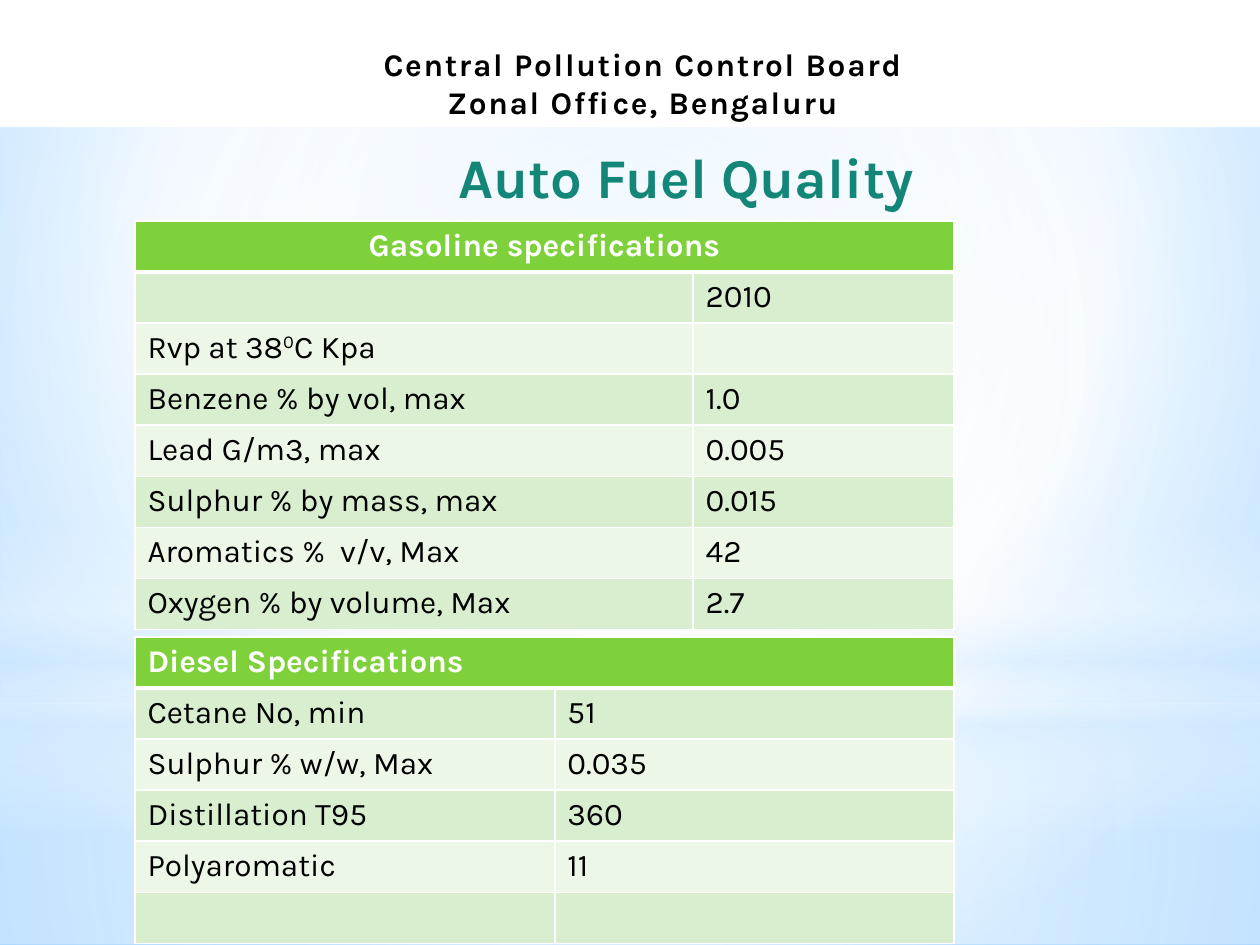
import pptx
import pptx.dml.color
import pptx.enum.shapes
import pptx.enum.text
import pptx.oxml.ns
import pptx.oxml.xmlchemy
import pptx.util
import lxml.etree

Pt = pptx.util.Pt
SHAPE = pptx.enum.shapes.MSO_SHAPE
ALIGN = pptx.enum.text.PP_ALIGN
ANCHOR = pptx.enum.text.MSO_ANCHOR
qn = pptx.oxml.ns.qn

COLORS = {
    "white": "FFFFFF", "black": "000000", "teal": "138677",
    "green": "7FD13B", "band_dark": "D8EECE", "band_light": "ECF7E8",
    "sky": "C2E3FF", "deep_sky": "79C1FF", "pale_sky": "D6ECFF",
}
WIDTH, HEIGHT = 720, 540
CENTER = (50, 50, 50, 50)


def rgb(name):
    return pptx.dml.color.RGBColor.from_string(COLORS[name])


def write_text(frame, lines, size=18, color="black", bold=False,
               align=ALIGN.LEFT, spacing=0):
    """Fill a text frame; parts between ^ marks are superscript."""
    for number, line in enumerate(lines):
        paragraph = frame.paragraphs[0] if number == 0 else frame.add_paragraph()
        paragraph.alignment = align
        for position, part in enumerate(line.split("^")):
            run = paragraph.add_run()
            run.text = part
            run.font.name = "Karla"
            run.font.size = Pt(size)
            run.font.bold = bold
            run.font.color.rgb = rgb(color)
            if spacing:
                run.font._element.set("spc", str(spacing * 100))
            if position % 2:
                run.font._element.set("baseline", "30000")


def set_gradient(fill, owner, stops, focus=None):
    """Stops are (position, colour, opacity); focus makes the gradient circular."""
    fill.gradient()
    gradient = owner.find(".//" + qn("a:gradFill"))
    for child in list(gradient):
        gradient.remove(child)
    stop_list = lxml.etree.SubElement(gradient, qn("a:gsLst"))
    for position, color, opacity in stops:
        stop = lxml.etree.SubElement(stop_list, qn("a:gs"), pos=str(position * 1000))
        tint = lxml.etree.SubElement(stop, qn("a:srgbClr"), val=COLORS[color])
        if opacity < 100:
            lxml.etree.SubElement(tint, qn("a:alpha"), val=str(opacity * 1000))
    if focus:
        circle = lxml.etree.SubElement(gradient, qn("a:path"), path="circle")
        edges = {side: str(share * 1000) for side, share in zip("ltrb", focus)}
        lxml.etree.SubElement(circle, qn("a:fillToRect"), **edges)
    else:
        lxml.etree.SubElement(gradient, qn("a:lin"), ang="5400000", scaled="0")


def set_borders(cell, top, bottom):
    """White cell borders, placed before the fill as the schema asks."""
    widths = {"a:lnL": 1, "a:lnR": 1, "a:lnT": top, "a:lnB": bottom}
    properties = cell._tc.get_or_add_tcPr()
    for order, (tag, width) in enumerate(widths.items()):
        border = lxml.etree.Element(qn(tag), w=str(Pt(width)))
        solid = lxml.etree.SubElement(border, qn("a:solidFill"))
        lxml.etree.SubElement(solid, qn("a:srgbClr"), val=COLORS["white"])
        properties.insert(order, border)


class SlideBuilder:
    row_height = 29.2

    def __init__(self, slide):
        self.slide = slide

    def background(self, stops, focus):
        set_gradient(self.slide.background.fill, self.slide._element, stops, focus)

    def shape(self, kind, left, top, width, height):
        shape = self.slide.shapes.add_shape(
            kind, Pt(left), Pt(top), Pt(width), Pt(height))
        shape.shadow.inherit = False
        shape.line.fill.background()
        return shape

    def glow(self, kind, top, height, stops, focus=None):
        shape = self.shape(kind, 0, top, WIDTH, height)
        set_gradient(shape.fill, shape._element, stops, focus)

    def banner(self, height, lines):
        banner = self.shape(SHAPE.RECTANGLE, 0, 0, WIDTH, height)
        banner.fill.solid()
        banner.fill.fore_color.rgb = rgb("white")
        frame = banner.text_frame
        frame.vertical_anchor = ANCHOR.BOTTOM
        frame.margin_left = Pt(21.6)
        write_text(frame, lines, bold=True, align=ALIGN.CENTER, spacing=1)

    def title(self, left, top, width, height, text):
        box = self.slide.shapes.add_textbox(Pt(left), Pt(top), Pt(width), Pt(height))
        box.text_frame.word_wrap = True
        write_text(box.text_frame, [text], size=32, color="teal", bold=True,
                   align=ALIGN.CENTER)

    def table(self, left, top, widths, heading, rows, heading_align=ALIGN.LEFT):
        records = [(heading, "")] + rows
        table = self.slide.shapes.add_table(
            len(records), len(widths), Pt(left), Pt(top), Pt(sum(widths)),
            Pt(self.row_height * len(records))).table
        table.first_row = table.horz_banding = False
        for column, width in zip(table.columns, widths):
            column.width = Pt(width)
        for row in table.rows:
            row.height = Pt(self.row_height)
        table.cell(0, 0).merge(table.cell(0, len(widths) - 1))

        for r, record in enumerate(records):
            band = "green" if r == 0 else ("band_light", "band_dark")[r % 2]
            for c, text in enumerate(record):
                cell = table.cell(r, c)
                cell.fill.solid()
                cell.fill.fore_color.rgb = rgb(band)
                set_borders(cell, top=3 if r == 1 else 1, bottom=3 if r == 0 else 1)
                if text:
                    write_text(cell.text_frame, [text], bold=r == 0,
                               color="black" if r else "white",
                               align=ALIGN.LEFT if r else heading_align)


def main():
    deck = pptx.Presentation()
    deck.slide_width, deck.slide_height = Pt(WIDTH), Pt(HEIGHT)
    page = SlideBuilder(deck.slides.add_slide(deck.slide_layouts[6]))

    # Sky backdrop
    page.background([(0, "sky", 100), (60, "white", 100), (100, "deep_sky", 100)],
                    (20, 10, 20, 60))
    page.glow(SHAPE.RECTANGLE, 402, 138,
              [(0, "white", 91), (37, "white", 76), (100, "pale_sky", 79)], CENTER)
    page.glow(SHAPE.RECTANGLE, 0, 402,
              [(0, "white", 89), (48, "white", 62), (100, "pale_sky", 79)], CENTER)
    page.glow(SHAPE.RECTANGLE, 296.6, 180,
              [(0, "white", 0), (29, "white", 30), (45, "pale_sky", 40),
               (55, "white", 26), (65, "pale_sky", 60), (100, "white", 0)])
    page.glow(SHAPE.OVAL, 126, 402, [(0, "white", 100), (56, "white", 0)], CENTER)

    # Office banner and title
    page.banner(72.7, ["Central Pollution Control Board", "Zonal Office, Bengaluru"])
    page.title(239, 77.8, 306, 46, "Auto Fuel Quality")

    # Fuel specifications
    page.table(77.1, 126.2, [319, 149], "Gasoline specifications", [
        ("", "2010"),
        ("Rvp at 38^0^C Kpa", ""),
        ("Benzene % by vol, max", "1.0"),
        ("Lead G/m3, max", "0.005"),
        ("Sulphur % by mass, max", "0.015"),
        ("Aromatics %  v/v, Max", "42"),
        ("Oxygen % by volume, Max", "2.7"),
    ], heading_align=ALIGN.CENTER)
    page.table(77.1, 363.9, [240, 228], "Diesel Specifications", [
        ("Cetane No, min", "51"),
        ("Sulphur % w/w, Max", "0.035"),
        ("Distillation T95", "360"),
        ("Polyaromatic", "11"),
        ("", ""),
    ])

    deck.save("out.pptx")


if __name__ == "__main__":
    main()
